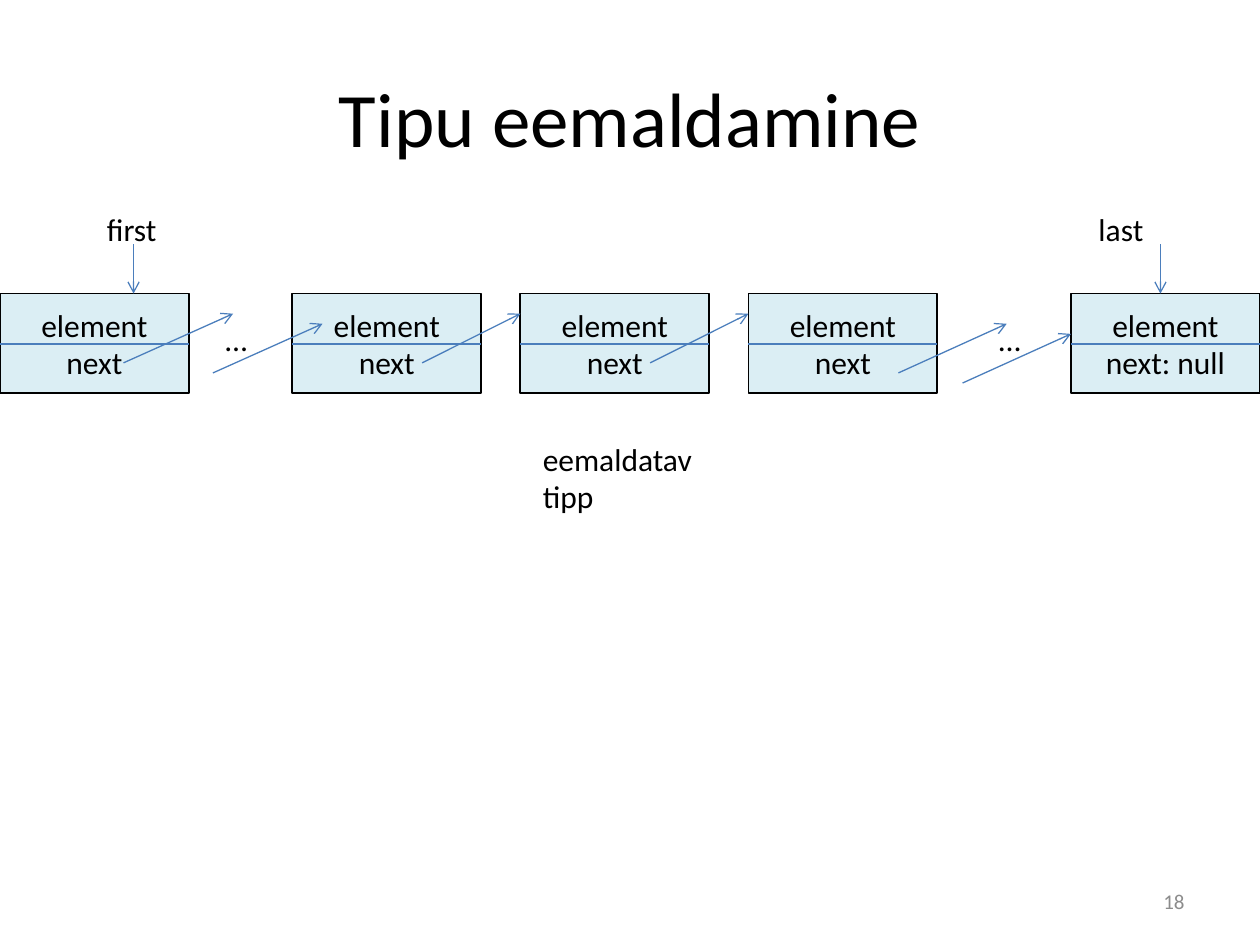
from typing import NamedTuple

from lxml import etree
from pptx import Presentation
from pptx.dml.color import RGBColor
from pptx.enum.shapes import MSO_CONNECTOR, MSO_SHAPE
from pptx.enum.text import MSO_ANCHOR, PP_ALIGN
from pptx.oxml.ns import qn
from pptx.util import Inches, Pt

STRAIGHT = MSO_CONNECTOR.STRAIGHT
RECTANGLE = MSO_SHAPE.RECTANGLE
MIDDLE, TOP = MSO_ANCHOR.MIDDLE, MSO_ANCHOR.TOP
LEFT, CENTER, RIGHT = PP_ALIGN.LEFT, PP_ALIGN.CENTER, PP_ALIGN.RIGHT

BLACK = RGBColor(0x00, 0x00, 0x00)
GRAY = RGBColor(0x8C, 0x8C, 0x8C)
NODE_FILL = RGBColor(0xDB, 0xEE, 0xF4)
LINK_BLUE = RGBColor(0x4B, 0x7E, 0xBC)
FONT = "Calibri"

NODE_TOP, NODE_WIDTH, NODE_HEIGHT = 2.33, 1.5, 0.79
NODE_MIDDLE = 2.73


class Node(NamedTuple):
    left: float
    next_text: str = "next"


class Label(NamedTuple):
    text: str
    left: float
    top: float
    width: float
    height: float = 0.4


class Link(NamedTuple):
    x1: float
    y1: float
    x2: float
    y2: float


NODES = [Node(0), Node(2.32), Node(4.13), Node(5.94), Node(8.5, "next: null")]

LABELS = [
    Label("…", 1.69, 2.49, 0.38),
    Label("…", 7.83, 2.49, 0.38),
    Label("first", 0.75, 1.62, 0.6),
    Label("last", 8.62, 1.62, 0.56),
    Label("eemaldatav\ntipp", 4.21, 3.44, 1.4, 0.71),
]

LINKS = [
    # From each node's next field to the following node
    Link(0.98, 2.88, 1.85, 2.49),
    Link(1.69, 2.96, 2.56, 2.57),
    Link(3.35, 2.88, 4.13, 2.49),
    Link(5.16, 2.88, 5.94, 2.49),
    Link(7.13, 2.96, 7.99, 2.57),
    Link(7.64, 3.04, 8.5, 2.65),
    # From the first and last labels down to their nodes
    Link(1.06, 1.94, 1.06, NODE_TOP),
    Link(9.21, 1.94, 9.21, NODE_TOP),
]


def write_text(shape, text: str, *, size: float = 18, color: RGBColor = BLACK,
               align: PP_ALIGN = LEFT, anchor: MSO_ANCHOR = TOP,
               wrap: bool = True) -> None:
    frame = shape.text_frame
    frame.text = text
    frame.word_wrap = wrap
    frame.vertical_anchor = anchor
    for paragraph in frame.paragraphs:
        paragraph.alignment = align
        for run in paragraph.runs:
            run.font.name = FONT
            run.font.size = Pt(size)
            run.font.color.rgb = color


def add_label(slide, label: Label, **text_format) -> None:
    box = slide.shapes.add_textbox(Inches(label.left), Inches(label.top),
                                   Inches(label.width), Inches(label.height))
    write_text(box, label.text, **text_format)


def add_link(slide, link: Link, arrow: bool = True) -> None:
    connector = slide.shapes.add_connector(
        STRAIGHT, Inches(link.x1), Inches(link.y1),
        Inches(link.x2), Inches(link.y2))
    connector.line.color.rgb = LINK_BLUE
    connector.line.width = Pt(0.75)
    if arrow:
        line_xml = connector.line._get_or_add_ln()
        etree.SubElement(line_xml, qn("a:tailEnd"), type="arrow")
    etree.SubElement(connector._element.spPr, qn("a:effectLst"))


def add_node(slide, node: Node) -> None:
    box = slide.shapes.add_shape(RECTANGLE, Inches(node.left), Inches(NODE_TOP),
                                 Inches(NODE_WIDTH), Inches(NODE_HEIGHT))
    box.shadow.inherit = False
    box.fill.solid()
    box.fill.fore_color.rgb = NODE_FILL
    box.line.color.rgb = BLACK
    box.line.width = Pt(1)
    write_text(box, f"element\n{node.next_text}", align=CENTER, anchor=MIDDLE)
    # Divider between the element and next fields
    add_link(slide, Link(node.left, NODE_MIDDLE,
                         node.left + NODE_WIDTH, NODE_MIDDLE), arrow=False)


def main() -> None:
    deck = Presentation()
    deck.slide_width, deck.slide_height = Inches(10), Inches(7.5)
    slide = deck.slides.add_slide(deck.slide_layouts[5])

    # Title and slide number
    title = slide.shapes.title
    title.left, title.top = Inches(0.5), Inches(0.3)
    title.width, title.height = Inches(9), Inches(1.25)
    write_text(title, "Tipu eemaldamine", size=44, align=CENTER, anchor=MIDDLE)
    add_label(slide, Label("18", 7.17, 6.95, 2.33), size=12, color=GRAY,
              align=RIGHT, anchor=MIDDLE)

    # Linked list
    for node in NODES:
        add_node(slide, node)
    for label in LABELS:
        add_label(slide, label, wrap=False)
    for link in LINKS:
        add_link(slide, link)

    deck.save("out.pptx")


if __name__ == "__main__":
    main()
